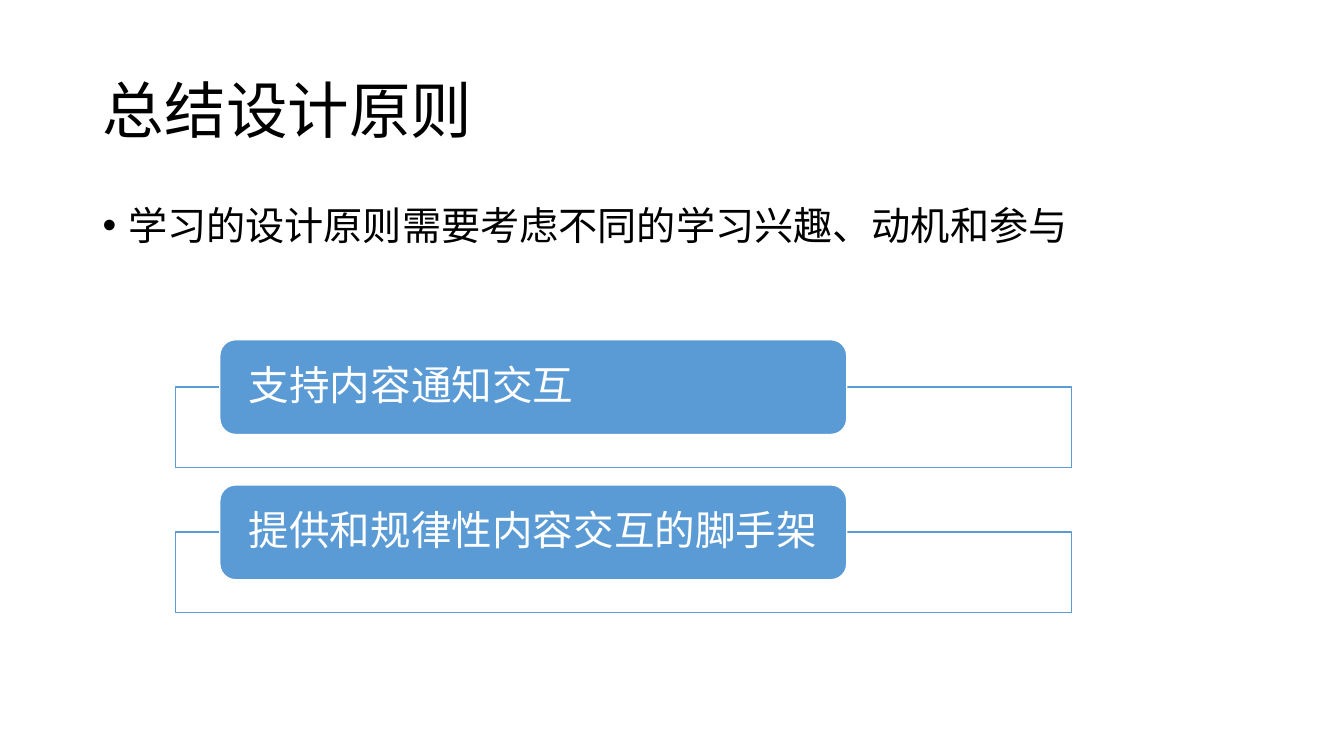
import pptx
import pptx.util
import pptx.dml.color
import pptx.enum.shapes
import pptx.enum.text
import pptx.oxml.ns
from lxml import etree

Cm = pptx.util.Cm
Pt = pptx.util.Pt
FONT = "Noto Sans CJK SC"
COLORS = {"text": "000000", "white": "FFFFFF", "blue": "5B9BD5"}
PRINCIPLES = ["支持内容通知交互", "提供和规律性内容交互的脚手架"]


def set_text(text_frame, text, size, color, anchor):
    text_frame.word_wrap = True
    text_frame.auto_size = pptx.enum.text.MSO_AUTO_SIZE.NONE
    text_frame.vertical_anchor = anchor
    text_frame.text = text
    paragraph = text_frame.paragraphs[0]
    paragraph.alignment = pptx.enum.text.PP_ALIGN.LEFT
    paragraph.line_spacing = 0.9
    run = paragraph.runs[0]
    run.font.size = Pt(size)
    run.font.name = FONT
    run.font.color.rgb = pptx.dml.color.RGBColor.from_string(COLORS[color])
    east_asian = etree.SubElement(run.font._element, pptx.oxml.ns.qn("a:ea"))
    east_asian.set("typeface", FONT)
    return paragraph


def add_box(shape_type, left, top, width, height, fill, line):
    shape = slide.shapes.add_shape(shape_type, Cm(left), Cm(top), Cm(width), Cm(height))
    shape.shadow.inherit = False
    shape.fill.solid()
    shape.fill.fore_color.rgb = pptx.dml.color.RGBColor.from_string(COLORS[fill])
    shape.line.color.rgb = pptx.dml.color.RGBColor.from_string(COLORS[line])
    shape.line.width = Pt(1)
    return shape


presentation = pptx.Presentation()
presentation.slide_width = Cm(33.87)
presentation.slide_height = Cm(19.05)
slide = presentation.slides.add_slide(presentation.slide_layouts[5])
anchors = pptx.enum.text.MSO_ANCHOR
shape_types = pptx.enum.shapes.MSO_SHAPE

# Title
title = slide.shapes.title
title.left, title.top, title.width, title.height = Cm(2.34), Cm(1.02), Cm(29.21), Cm(3.68)
set_text(title.text_frame, "总结设计原则", 44, "text", anchors.MIDDLE)

# Bulleted statement
body = slide.shapes.add_textbox(Cm(2.34), Cm(5.08), Cm(29.21), Cm(12.09))
statement = set_text(body.text_frame, "学习的设计原则需要考虑不同的学习兴趣、动机和参与",
                     28, "text", anchors.TOP)
statement.space_before = Pt(10)
properties = statement._p.get_or_add_pPr()
properties.set("marL", str(Cm(0.64)))
properties.set("indent", str(-Cm(0.64)))
bullet_font = etree.SubElement(properties, pptx.oxml.ns.qn("a:buFont"))
bullet_font.set("typeface", "Arial")
bullet = etree.SubElement(properties, pptx.oxml.ns.qn("a:buChar"))
bullet.set("char", "•")

# Principles: an outlined frame with a label over its top edge
for index, principle in enumerate(PRINCIPLES):
    label_top = 8.56 + index * 3.66
    frame = add_box(shape_types.RECTANGLE, 4.42, label_top + 1.19, 22.58, 2.03, "white", "blue")
    frame_color = frame.fill._xPr.find(".//" + pptx.oxml.ns.qn("a:srgbClr"))
    etree.SubElement(frame_color, pptx.oxml.ns.qn("a:alpha")).set("val", "90000")

    label = add_box(shape_types.ROUNDED_RECTANGLE, 5.54, label_top, 15.8, 2.39, "blue", "white")
    set_text(label.text_frame, principle, 29, "white", anchors.MIDDLE)
    label.text_frame.margin_left = Cm(0.61)
    label.text_frame.margin_right = label.text_frame.margin_top = label.text_frame.margin_bottom = 0

presentation.save("out.pptx")
